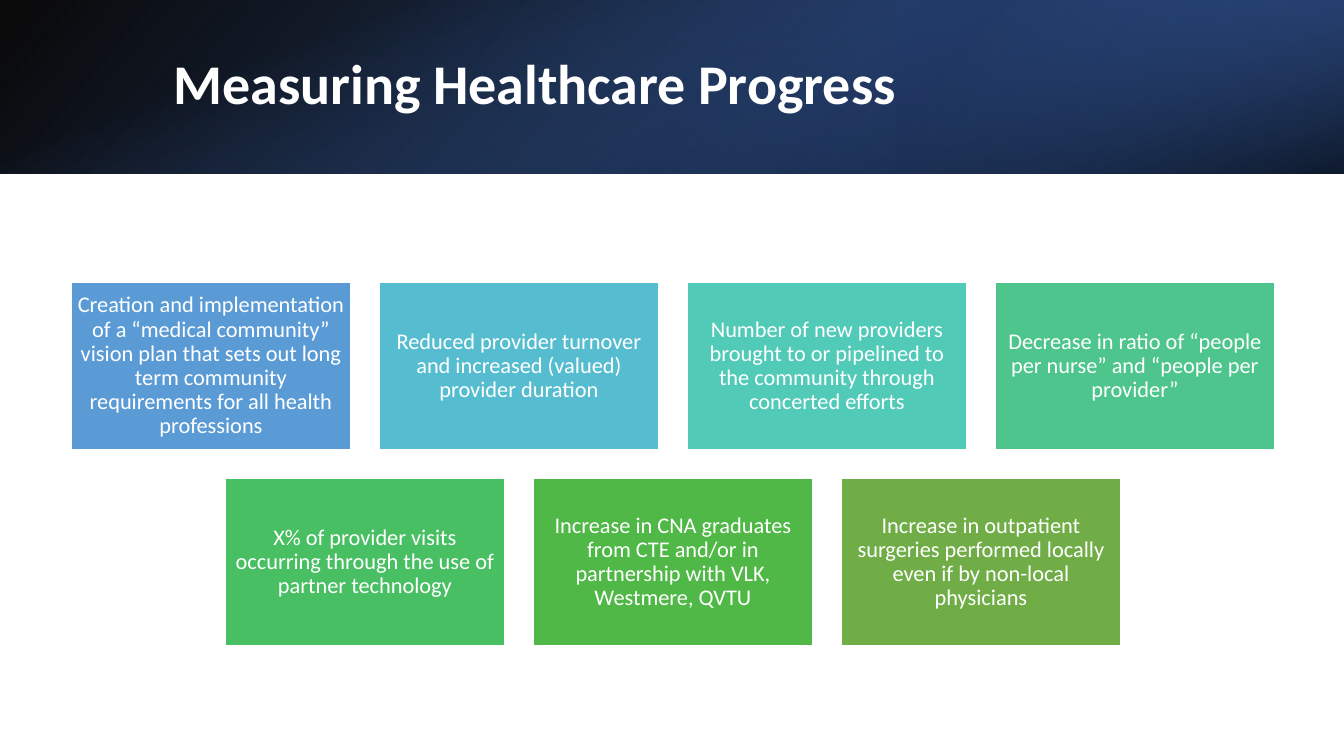
from pptx import Presentation
from pptx.dml.color import RGBColor
from pptx.enum.shapes import MSO_SHAPE as Shape
from pptx.enum.text import MSO_ANCHOR as Anchor, MSO_AUTO_SIZE as Fit, PP_ALIGN as Align
from pptx.oxml.ns import qn
from pptx.oxml.xmlchemy import OxmlElement as Element
from pptx.util import Pt

SCALE = 914400 / 100.8
HUES = {
    "white": "FFFFFF", "black": "000000", "navy": "203864", "royal": "2F5597",
    "bright": "4472C4", "blue": "5B9BD5", "sky": "56BCD0", "teal": "52CAB8",
    "mint": "4DC58D", "green": "49BF64", "leaf": "50B846", "olive": "70AD47",
}


def px(*sizes):
    return [round(size * SCALE) for size in sizes]


def hue(name):
    return RGBColor.from_string(HUES[name])


deck = Presentation()
deck.slide_width, deck.slide_height = px(1344, 756)
slide = deck.slides.add_slide(deck.slide_layouts[5])
shapes = slide.shapes

bands = [
    ((0, 0, 1344, 174), 0, True, 140, [(0, "black", 96), (100, "royal", 100)]),
    ((896, 0, 448, 174), 180, True, 320, [(19, "navy", 68), (100, "bright", 79)]),
    ((585, -585, 174, 1344), 90, False, 340, [(23, "bright", 0), (99, "black", 74)]),
]
for area, turn, flip, angle, stops in bands:
    band = shapes.add_shape(Shape.RECTANGLE, *px(*area))
    band.shadow.inherit = False
    band.rotation = turn
    band.line.fill.background()
    props = band._element.spPr
    if flip:
        props.find(qn("a:xfrm")).set("flipH", "1")
    band.fill.gradient()
    band.fill.gradient_angle = 360 - angle
    for stop, (place, name, _) in zip(band.fill.gradient_stops, stops):
        stop.position = place / 100
        stop.color.rgb = hue(name)
    tints = props.find(qn("a:gradFill")).iter(qn("a:srgbClr"))
    for tint, (_, _, solid) in zip(tints, stops):
        alpha = Element("a:alpha")
        alpha.set("val", str(solid * 1000))
        tint.append(alpha)

title = shapes.title
title.left, title.top, title.width, title.height = px(151, 38, 1107, 97)
shapes._spTree.append(title._element)
frame = title.text_frame
frame.text = " Measuring Healthcare Progress"
frame.auto_size = Fit.NONE
frame.vertical_anchor = Anchor.MIDDLE
head = frame.paragraphs[0]
head.alignment = Align.LEFT
head.line_spacing = 0.9
head.font.name = "Calibri"
head.font.size = Pt(40)
head.font.bold = True
head.font.color.rgb = hue("white")

rows = [
    [
        ("blue", "Creation and implementation of a “medical community” vision plan that sets out long term community requirements for all health professions"),
        ("sky", "Reduced provider turnover and increased (valued) provider duration"),
        ("teal", "Number of new providers brought to or pipelined to the community through concerted efforts"),
        ("mint", "Decrease in ratio of “people per nurse” and “people per provider”"),
    ],
    [
        ("green", "X% of provider visits occurring through the use of partner technology"),
        ("leaf", "Increase in CNA graduates from CTE and/or in partnership with VLK, Westmere, QVTU"),
        ("olive", "Increase in outpatient surgeries performed locally even if by non-local physicians"),
    ],
]
wide, high, gap = 280, 168, 28
step = wide + gap
for row, goals in enumerate(rows):
    left = 71 + (len(rows[0]) - len(goals)) * step // 2
    top = 282 + row * (high + gap)
    for col, (name, text) in enumerate(goals):
        box = shapes.add_shape(Shape.RECTANGLE, *px(left + col * step, top, wide, high))
        box.shadow.inherit = False
        box.fill.solid()
        box.fill.fore_color.rgb = hue(name)
        box.line.color.rgb = hue("white")
        box.line.width = Pt(1)
        frame = box.text_frame
        frame.text = text
        frame.word_wrap = True
        frame.vertical_anchor = Anchor.MIDDLE
        frame.margin_left, frame.margin_top, frame.margin_right, frame.margin_bottom = px(6, 7, 6, 7)
        goal = frame.paragraphs[0]
        goal.alignment = Align.CENTER
        goal.line_spacing = 0.9
        goal.font.name = "Calibri"
        goal.font.size = Pt(16)
        goal.font.color.rgb = hue("white")

deck.save("out.pptx")
